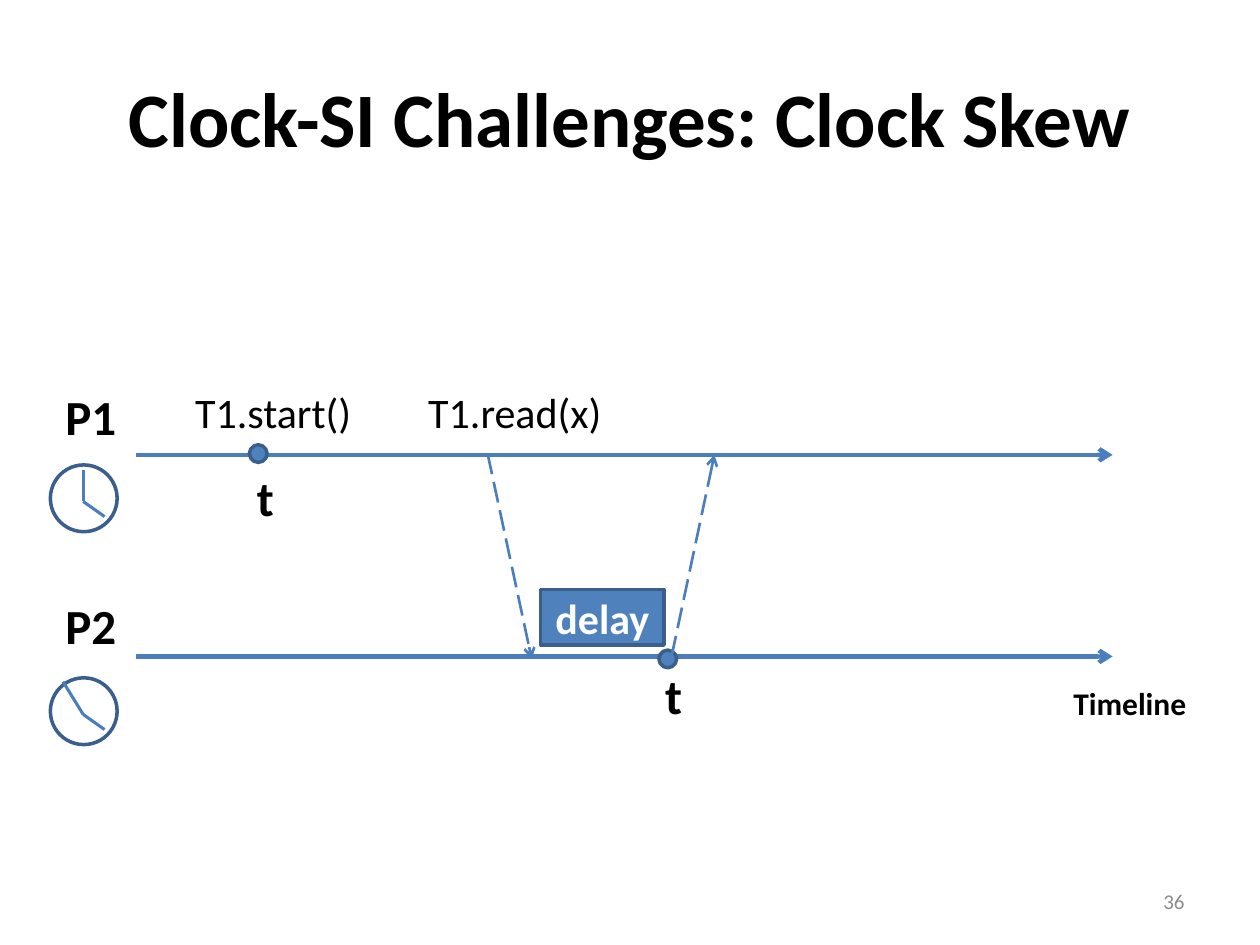
from lxml import etree
from pptx import Presentation
from pptx.dml.color import RGBColor
from pptx.enum.dml import MSO_LINE
from pptx.enum.shapes import MSO_CONNECTOR, MSO_SHAPE
from pptx.enum.text import MSO_ANCHOR, PP_ALIGN
from pptx.oxml.ns import qn
from pptx.util import Inches, Pt

STRAIGHT = MSO_CONNECTOR.STRAIGHT
OVAL, RECTANGLE = MSO_SHAPE.OVAL, MSO_SHAPE.RECTANGLE
LONG_DASH = MSO_LINE.LONG_DASH
TOP, MIDDLE = MSO_ANCHOR.TOP, MSO_ANCHOR.MIDDLE
LEFT, CENTER, RIGHT = PP_ALIGN.LEFT, PP_ALIGN.CENTER, PP_ALIGN.RIGHT

THEME = {
    "font": "Calibri",
    "text": "000000", "inverse": "FFFFFF", "muted": "8C8C8C",
    "fill": "4F81BD", "outline": "3A5F8C", "line": "4B7EBC",
    "title": 44, "process": 28, "event": 24, "axis": 18, "number": 12,
    "outline_width": 2, "timeline_width": 2.5,
    "message_width": 1.5, "hand_width": 1.75,
}

TITLE = ("Clock-SI Challenges: Clock Skew", (0.5, 0.3, 9, 1.25))
SLIDE_NUMBER = ("36", (7.17, 6.95, 2.33, 0.4))
DELAY = ("delay", (4.29, 4.68, 0.98, 0.44))
LABELS = [
    ("T1.start()", (1.45, 3.02, 1.46, 0.5), "event", False),
    ("T1.read(x)", (3.3, 3.02, 1.59, 0.5), "event", False),
    ("P1", (0.42, 3.02, 0.61, 0.57), "process", True),
    ("P2", (0.42, 4.68, 0.61, 0.57), "process", True),
    ("t", (1.94, 3.66, 0.34, 0.57), "process", True),
    ("t", (5.18, 5.23, 0.34, 0.57), "process", True),
    ("Timeline", (8.42, 5.38, 1.1, 0.4), "axis", True),
]
TIMELINE_START, TIMELINE_END = 1.08, 8.83
TIMELINES = [3.61, 5.21]
MESSAGES = [((3.87, 3.6), (4.22, 5.23)), ((5.33, 5.21), (5.67, 3.61))]
EVENT_CENTERS = [(2.05, 3.6), (5.3, 5.23)]
EVENT_SIZE = 0.14
CLOCK_LEFT, CLOCK_SIZE = 0.4, 0.53
CLOCKS = [(3.69, (0.66, 3.73)), (5.38, (0.5, 5.41))]
CLOCK_PIVOT = (0.66, 0.29)
HOUR_HAND = (0.17, 0.12)

presentation = Presentation()
presentation.slide_width, presentation.slide_height = Inches(10), Inches(7.5)
slide = presentation.slides.add_slide(presentation.slide_layouts[6])


def color(name):
    return RGBColor.from_string(THEME[name])


def write(shape, text, size, bold=False, ink="text", align=LEFT, anchor=TOP, wrap=True):
    frame = shape.text_frame
    frame.text = text
    frame.word_wrap = wrap
    frame.vertical_anchor = anchor
    paragraph = frame.paragraphs[0]
    paragraph.alignment = align
    font = paragraph.runs[0].font
    font.name, font.size, font.bold = THEME["font"], Pt(THEME[size]), bold
    font.color.rgb = color(ink)


def add_text(text, box, size, **style):
    write(slide.shapes.add_textbox(*map(Inches, box)), text, size, **style)


def add_figure(kind, box, filled=True):
    figure = slide.shapes.add_shape(kind, *map(Inches, box))
    figure.shadow.inherit = False
    if filled:
        figure.fill.solid()
        figure.fill.fore_color.rgb = color("fill")
    else:
        figure.fill.background()
    figure.line.color.rgb = color("outline")
    figure.line.width = Pt(THEME["outline_width"])
    return figure


def add_line(start, end, width, arrow=False, dash=None):
    connector = slide.shapes.add_connector(STRAIGHT, *map(Inches, (*start, *end)))
    connector.line.color.rgb = color("line")
    connector.line.width = Pt(THEME[width])
    if dash:
        connector.line.dash_style = dash
    if arrow:
        etree.SubElement(connector.line._get_or_add_ln(), qn("a:tailEnd"), type="arrow")
    etree.SubElement(connector._element.spPr, qn("a:effectLst"))


add_text(*TITLE, "title", bold=True, align=CENTER, anchor=MIDDLE)

for y in TIMELINES:
    add_line((TIMELINE_START, y), (TIMELINE_END, y), "timeline_width", arrow=True)

for x, y in EVENT_CENTERS:
    add_figure(OVAL, (x - EVENT_SIZE / 2, y - EVENT_SIZE / 2, EVENT_SIZE, EVENT_SIZE))

delay_text, delay_box = DELAY
write(add_figure(RECTANGLE, delay_box), delay_text, "event", bold=True,
      ink="inverse", align=CENTER, anchor=MIDDLE, wrap=False)

for sender, receiver in MESSAGES:
    add_line(sender, receiver, "message_width", arrow=True, dash=LONG_DASH)

for top, minute_tip in CLOCKS:
    add_figure(OVAL, (CLOCK_LEFT, top, CLOCK_SIZE, CLOCK_SIZE), filled=False)
    pivot = (CLOCK_PIVOT[0], top + CLOCK_PIVOT[1])
    hour_tip = (pivot[0] + HOUR_HAND[0], pivot[1] + HOUR_HAND[1])
    for tip in (minute_tip, hour_tip):
        add_line(tip, pivot, "hand_width")

for text, box, size, bold in LABELS:
    add_text(text, box, size, bold=bold, wrap=False)

add_text(*SLIDE_NUMBER, "number", ink="muted", align=RIGHT, anchor=MIDDLE)

presentation.save("out.pptx")
